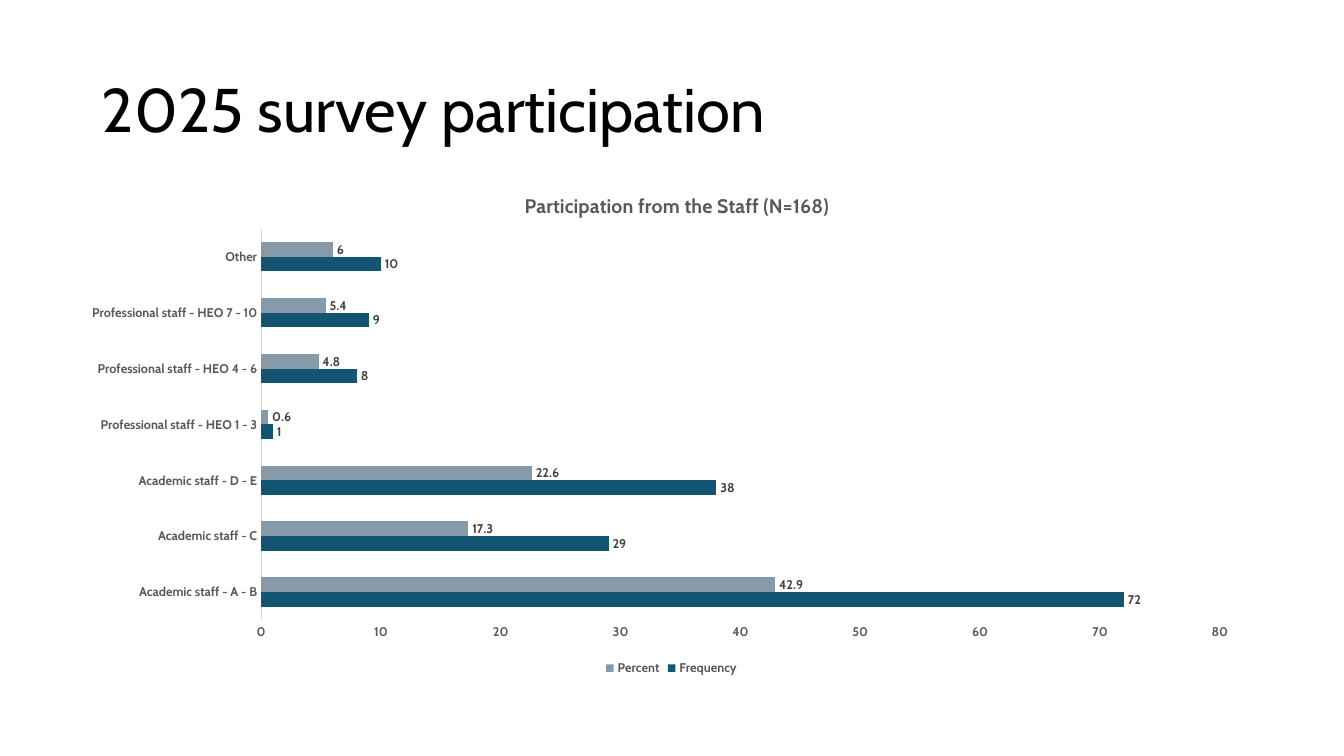
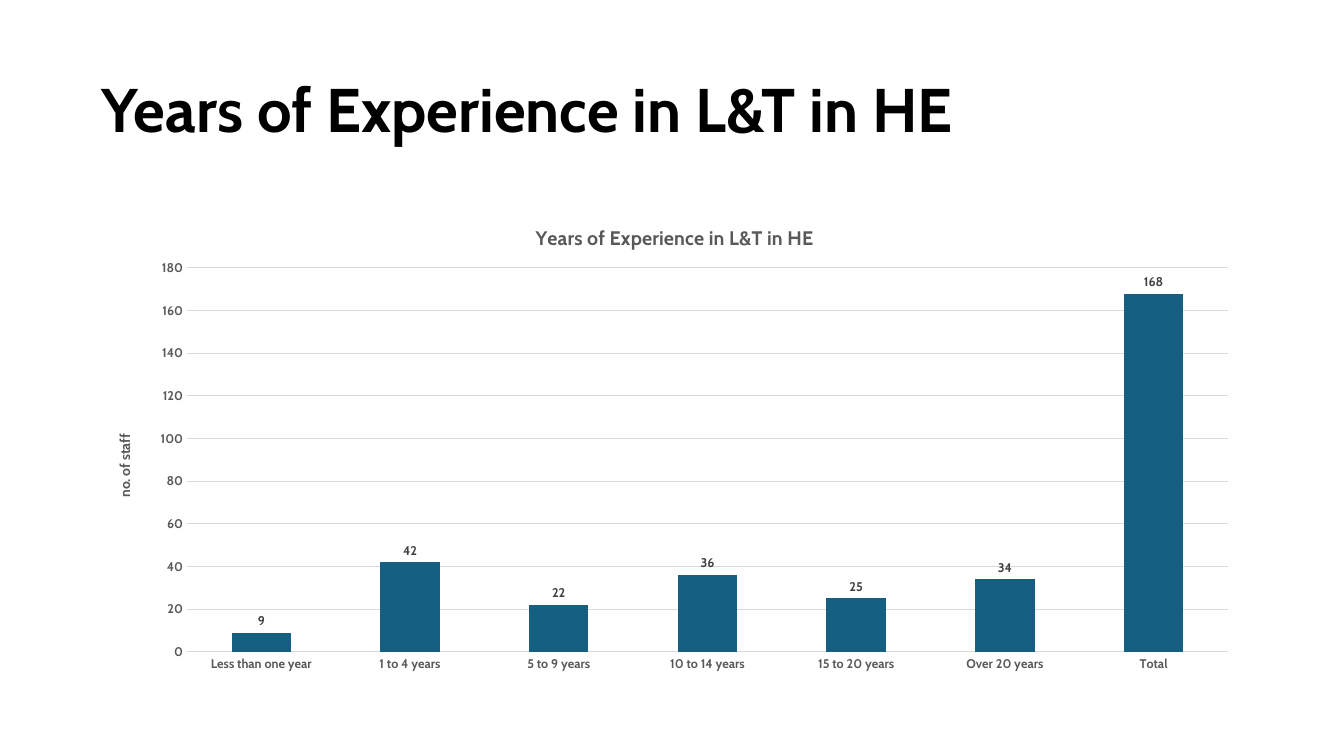
from dataclasses import dataclass

from lxml import etree
from pptx import Presentation
from pptx.chart.chart import Chart
from pptx.chart.data import CategoryChartData
from pptx.dml.color import RGBColor
from pptx.enum.chart import XL_CHART_TYPE, XL_LABEL_POSITION, XL_LEGEND_POSITION, XL_TICK_MARK
from pptx.enum.text import MSO_ANCHOR
from pptx.oxml.ns import qn
from pptx.util import Emu, Pt

BAR = XL_CHART_TYPE.BAR_CLUSTERED
COLUMN = XL_CHART_TYPE.COLUMN_CLUSTERED
OUTSIDE_END = XL_LABEL_POSITION.OUTSIDE_END
LEGEND_BOTTOM = XL_LEGEND_POSITION.BOTTOM
NO_TICK = XL_TICK_MARK.NONE
MIDDLE = MSO_ANCHOR.MIDDLE

EMU_PER_PX = 914400 / 100.8
SLIDE_SIZE = (1344, 756)
BLANK_LAYOUT = 6
FONT = "Cabin"
COLORS = {
    "title": "000000",
    "axis_text": "595959",
    "value_text": "404040",
    "rule": "D9D9D9",
    "frequency": "135573",
    "percent": "879AAA",
    "experience": "156082",
}


@dataclass(frozen=True)
class Box:
    """A rectangle on the slide, in px."""
    left: int
    top: int
    width: int
    height: int

    def emu(self) -> tuple[Emu, ...]:
        return tuple(px(n) for n in (self.left, self.top, self.width, self.height))


@dataclass(frozen=True)
class Measure:
    name: str
    values: tuple[float, ...]
    color: str


@dataclass(frozen=True)
class ChartSlide:
    heading: str
    heading_bold: bool
    chart_type: int
    chart_title: str
    title_at: tuple[int, int]
    frame: Box
    plot: Box
    categories: tuple[str, ...]
    measures: tuple[Measure, ...]
    gap: int
    axis_max: int
    axis_step: int
    axis_title: str = ""
    category_line: bool = False
    gridlines: bool = False
    legend: bool = False


HEADING_BOX = Box(92, 40, 1159, 146)

SLIDES = (
    ChartSlide(
        heading="2025 survey participation",
        heading_bold=False,
        chart_type=BAR,
        chart_title="Participation from the Staff (N=168)",
        title_at=(521, 189),
        frame=Box(92, 168, 1159, 512),
        plot=Box(261, 229, 959, 391),
        categories=(
            "Academic staff - A - B",
            "Academic staff - C",
            "Academic staff - D - E",
            "Professional staff - HEO 1 - 3",
            "Professional staff - HEO 4 - 6",
            "Professional staff - HEO 7 - 10",
            "Other",
        ),
        measures=(
            Measure("Frequency", (72, 29, 38, 1, 8, 9, 10), "frequency"),
            Measure("Percent", (42.9, 17.3, 22.6, 0.6, 4.8, 5.4, 6), "percent"),
        ),
        gap=182,
        axis_max=80,
        axis_step=10,
        category_line=True,
        legend=True,
    ),
    ChartSlide(
        heading="Years of Experience in L&T in HE",
        heading_bold=True,
        chart_type=COLUMN,
        chart_title="Years of Experience in L&T in HE",
        title_at=(532, 221),
        frame=Box(92, 201, 1159, 480),
        plot=Box(187, 268, 1041, 384),
        categories=(
            "Less than one year",
            "1 to 4 years",
            "5 to 9 years",
            "10 to 14 years",
            "15 to 20 years",
            "Over 20 years",
            "Total",
        ),
        measures=(Measure("Series 1", (9, 42, 22, 36, 25, 34, 168), "experience"),),
        gap=150,
        axis_max=180,
        axis_step=20,
        axis_title="no. of staff",
        gridlines=True,
    ),
)


def px(length: int) -> Emu:
    return Emu(round(length * EMU_PER_PX))


def rgb(color: str) -> RGBColor:
    return RGBColor.from_string(COLORS[color])


def style_font(font, size: int, color: str, bold: bool = True) -> None:
    font.name = FONT
    font.size = Pt(size)
    font.bold = bold
    font.color.rgb = rgb(color)


def add_run(paragraph, text: str, size: int, color: str, bold: bool = True) -> None:
    run = paragraph.add_run()
    run.text = text
    style_font(run.font, size, color, bold)


def style_line(line, visible: bool) -> None:
    if visible:
        line.color.rgb = rgb("rule")
        line.width = Pt(0.75)
    else:
        line.fill.background()


def place_part(part, index: int, settings: dict[str, str | float]) -> None:
    """Give a chart part a manual layout, as child number index."""
    for old in part.findall(qn("c:layout")):
        part.remove(old)
    layout = etree.Element(qn("c:layout"))
    manual = etree.SubElement(layout, qn("c:manualLayout"))
    for tag, value in settings.items():
        etree.SubElement(manual, qn(f"c:{tag}")).set("val", str(value))
    part.insert(index, layout)


def place_title_and_plot(chart: Chart, content: ChartSlide) -> None:
    frame, plot = content.frame, content.plot

    def position(left: int, top: int) -> dict[str, str | float]:
        return {
            "xMode": "edge",
            "yMode": "edge",
            "x": (left - frame.left) / frame.width,
            "y": (top - frame.top) / frame.height,
        }

    chart_root = chart.element.find(qn("c:chart"))
    place_part(chart_root.find(qn("c:title")), 1, position(*content.title_at))
    place_part(
        chart_root.find(qn("c:plotArea")),
        0,
        {
            "layoutTarget": "inner",
            **position(plot.left, plot.top),
            "w": plot.width / frame.width,
            "h": plot.height / frame.height,
        },
    )


def style_axes(chart: Chart, content: ChartSlide) -> None:
    category_axis, value_axis = chart.category_axis, chart.value_axis
    for axis, line_visible in ((category_axis, content.category_line), (value_axis, False)):
        axis.major_tick_mark = axis.minor_tick_mark = NO_TICK
        style_font(axis.tick_labels.font, 9, "axis_text")
        style_line(axis.format.line, line_visible)
    value_axis.minimum_scale = 0
    value_axis.maximum_scale = content.axis_max
    value_axis.major_unit = content.axis_step
    value_axis.has_major_gridlines = content.gridlines
    if content.gridlines:
        style_line(value_axis.major_gridlines.format.line, True)
    if content.axis_title:
        title_frame = value_axis.axis_title.text_frame
        add_run(title_frame.paragraphs[0], content.axis_title, 10, "axis_text")


def style_measures(chart: Chart, content: ChartSlide) -> None:
    plot = chart.plots[0]
    plot.gap_width = content.gap
    plot.overlap = 0
    plot.vary_by_categories = False
    for series, measure in zip(plot.series, content.measures):
        series.format.fill.solid()
        series.format.fill.fore_color.rgb = rgb(measure.color)
        series.invert_if_negative = False
        labels = series.data_labels
        labels.show_value = True
        labels.position = OUTSIDE_END
        style_font(labels.font, 9, "value_text")


def add_heading(slide, content: ChartSlide) -> None:
    frame = slide.shapes.add_textbox(*HEADING_BOX.emu()).text_frame
    frame.word_wrap = True
    frame.vertical_anchor = MIDDLE
    paragraph = frame.paragraphs[0]
    paragraph.line_spacing = 0.9
    add_run(paragraph, content.heading, 44, "title", content.heading_bold)


def add_survey_chart(slide, content: ChartSlide) -> None:
    data = CategoryChartData()
    data.categories = content.categories
    for measure in content.measures:
        data.add_series(measure.name, measure.values)
    chart = slide.shapes.add_chart(content.chart_type, *content.frame.emu(), data).chart
    style_font(chart.font, 10, "title", False)
    chart.has_title = True
    title_frame = chart.chart_title.text_frame
    add_run(title_frame.paragraphs[0], content.chart_title, 14, "axis_text")
    chart.has_legend = content.legend
    if content.legend:
        chart.legend.position = LEGEND_BOTTOM
        chart.legend.include_in_layout = False
        style_font(chart.legend.font, 9, "axis_text")
    style_axes(chart, content)
    style_measures(chart, content)
    place_title_and_plot(chart, content)


def main() -> None:
    deck = Presentation()
    deck.slide_width, deck.slide_height = (px(side) for side in SLIDE_SIZE)
    for content in SLIDES:
        slide = deck.slides.add_slide(deck.slide_layouts[BLANK_LAYOUT])
        add_heading(slide, content)
        add_survey_chart(slide, content)
    deck.save("out.pptx")


if __name__ == "__main__":
    main()
